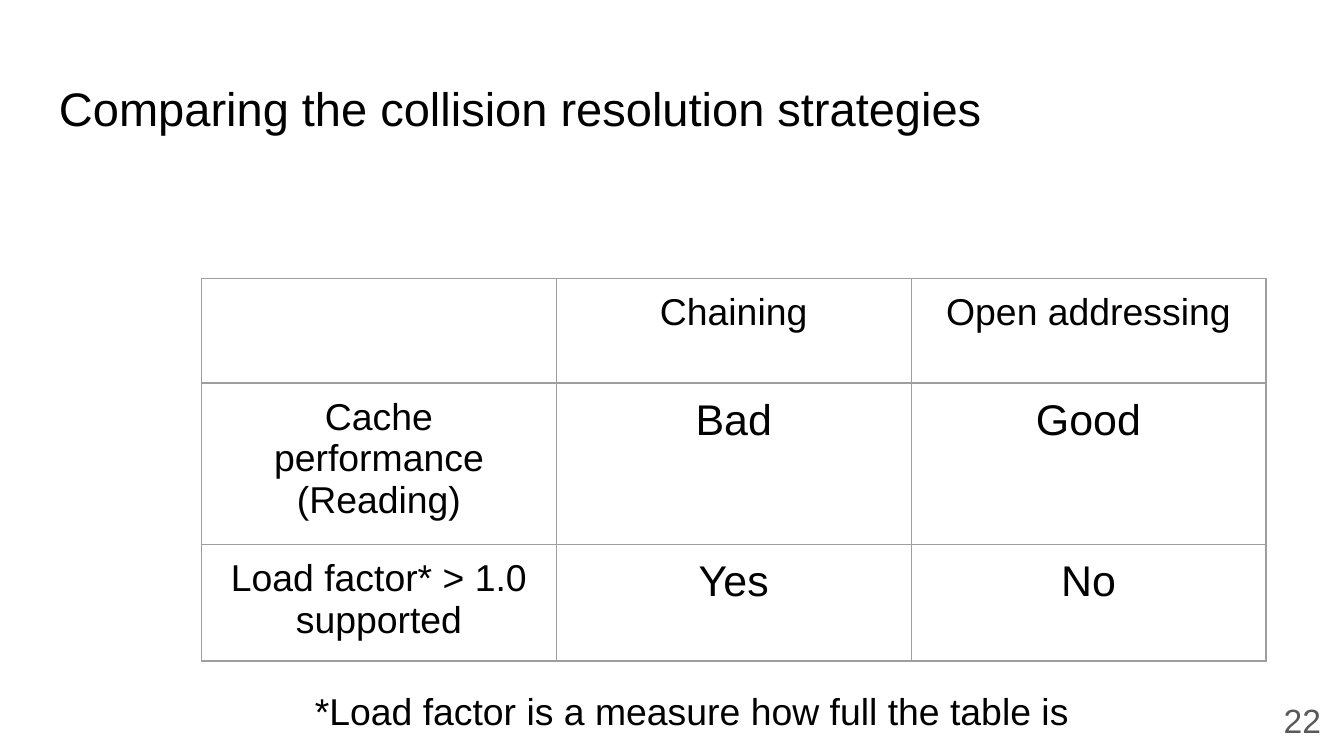
from lxml import etree
from pptx import Presentation
from pptx import util as u
from pptx.dml.color import RGBColor
from pptx.enum import text
from pptx.oxml.ns import qn

WIDTH = 10
HEIGHT = WIDTH * 9 / 16
ROWS = [
    ["", "Chaining", "Open addressing"],
    ["Cache performance (Reading)", "Bad", "Good"],
    ["Load factor* > 1.0 supported", "Yes", "No"],
]
ROW_HEIGHTS = [0.78, 0.75, 0.78]


def color(value):
    return RGBColor.from_string(value)


class SlideBuilder:
    font = "Arial"
    ink = "000000"
    muted = "595959"
    rule = "9E9E9E"
    inset = u.Inches(0.1)

    def __init__(self, presentation):
        self.slide = presentation.slides.add_slide(presentation.slide_layouts[6])
        self.slide.background.fill.solid()
        self.slide.background.fill.fore_color.rgb = color("FFFFFF")

    def area(self, left, top, width, height):
        return (
            u.Inches(left * WIDTH), u.Inches(top * HEIGHT),
            u.Inches(width * WIDTH), u.Inches(height * HEIGHT),
        )

    def style(self, paragraph, size, ink, align):
        paragraph.alignment = align
        paragraph.font.size = u.Pt(size)
        for run in paragraph.runs:
            run.font.name = self.font
            run.font.size = u.Pt(size)
            run.font.bold = False
            run.font.color.rgb = color(ink)

    def pad(self, item):
        item.margin_left = item.margin_right = self.inset
        item.margin_top = item.margin_bottom = self.inset

    def label(self, words, area, size, ink=ink, align=text.PP_ALIGN.CENTER):
        frame = self.slide.shapes.add_textbox(*self.area(*area)).text_frame
        frame.word_wrap = True
        self.pad(frame)
        frame.text = words
        self.style(frame.paragraphs[0], size, ink, align)

    def borders(self, cell):
        properties = cell._tc.get_or_add_tcPr()
        for position, side in enumerate(("lnL", "lnR", "lnT", "lnB")):
            line = etree.Element(qn(f"a:{side}"), w=str(u.Pt(0.75)))
            fill = etree.SubElement(line, qn("a:solidFill"))
            etree.SubElement(fill, qn("a:srgbClr"), val=self.rule)
            properties.insert(position, line)

    def table(self, rows, heights, area, size, value_size):
        table = self.slide.shapes.add_table(
            len(rows), len(rows[0]), *self.area(*area)
        ).table
        table.first_row = table.horz_banding = False
        for row, height in zip(table.rows, heights):
            row.height = u.Inches(height)
        for row_index, row in enumerate(rows):
            for column_index, words in enumerate(row):
                cell = table.cell(row_index, column_index)
                cell.fill.background()
                self.borders(cell)
                self.pad(cell)
                cell.text_frame.text = words
                is_value = row_index and column_index
                self.style(
                    cell.text_frame.paragraphs[0],
                    value_size if is_value else size,
                    self.ink, text.PP_ALIGN.CENTER,
                )


def main():
    presentation = Presentation()
    presentation.slide_width = u.Inches(WIDTH)
    presentation.slide_height = u.Inches(HEIGHT)
    builder = SlideBuilder(presentation)
    builder.label(
        "Comparing the collision resolution strategies",
        (0.034, 0.49 / HEIGHT, 0.932, 0.63 / HEIGHT), 25.2,
        align=text.PP_ALIGN.LEFT,
    )
    builder.label(
        "22", (0.942, 5.11 / HEIGHT, 0.054, 0.5 / HEIGHT), 18, builder.muted
    )
    builder.table(
        ROWS, ROW_HEIGHTS,
        (0.15, 2.07 / HEIGHT, 0.792, sum(ROW_HEIGHTS) / HEIGHT), 20, 23,
    )
    builder.label(
        "*Load factor is a measure how full the table is",
        (0.119, 5.02 / HEIGHT, 0.792, 0.54 / HEIGHT), 20,
    )
    presentation.save("out.pptx")


if __name__ == "__main__":
    main()
